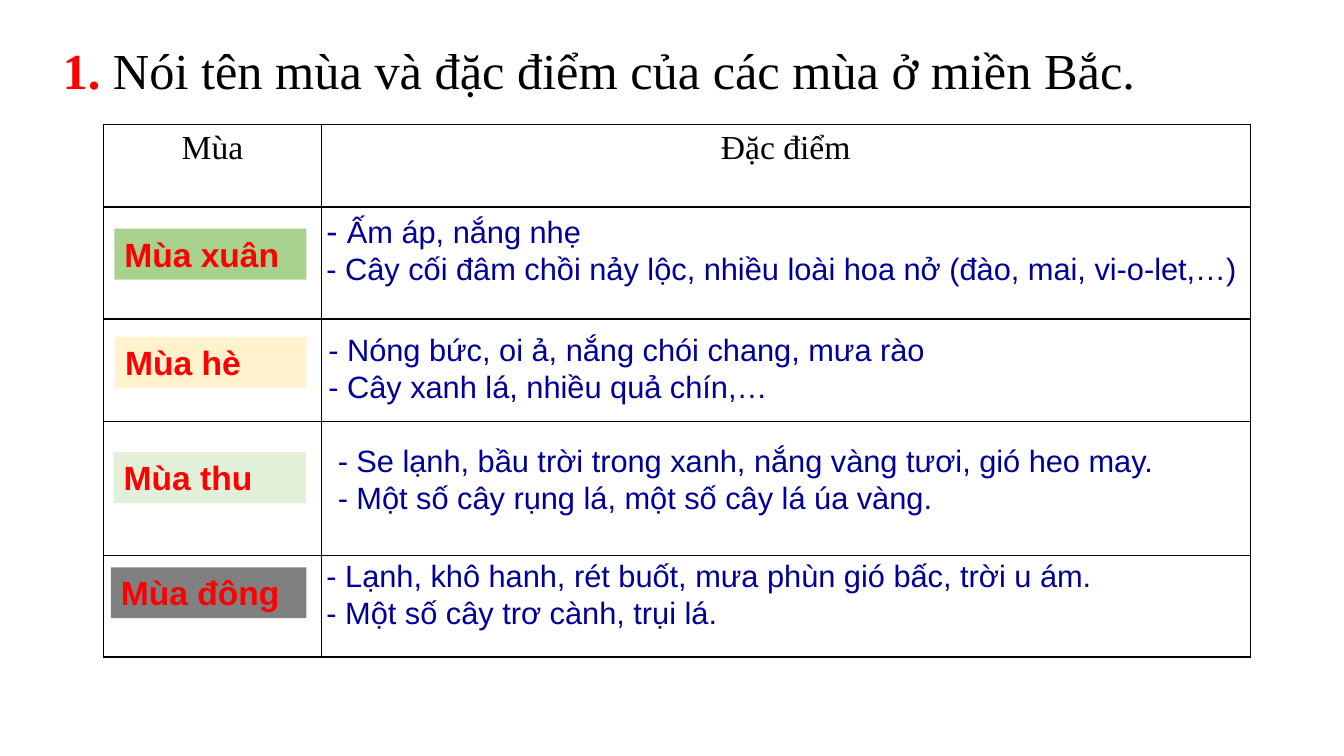
from lxml.etree import SubElement
from pptx import Presentation
from pptx.dml.color import RGBColor
from pptx.enum.shapes import MSO_SHAPE as SHAPE
from pptx.enum.text import MSO_ANCHOR as ANCHOR, MSO_AUTO_SIZE as AUTO, PP_ALIGN as ALIGN
from pptx.oxml.ns import qn
from pptx.util import Pt

RED = RGBColor(0xFF, 0x00, 0x00)
NAVY = RGBColor(0x00, 0x00, 0x99)
BLACK = RGBColor(0x00, 0x00, 0x00)
WHITE = RGBColor(0xFF, 0xFF, 0xFF)
SPRING = RGBColor(0xA9, 0xD1, 0x8E)
SUMMER = RGBColor(0xFF, 0xF2, 0xCC)
AUTUMN = RGBColor(0xE2, 0xF0, 0xD9)
WINTER = RGBColor(0x80, 0x80, 0x80)


def style(r, size, color, name="Arial", bold=False):
    r.font.name = name
    r.font.size = Pt(size)
    r.font.bold = bold
    r.font.color.rgb = color


def add_borders(cell):
    """Give the cell a thin black line on all four sides, then a white fill."""
    tcPr = cell._tc.get_or_add_tcPr()
    for side in ("a:lnL", "a:lnR", "a:lnT", "a:lnB"):
        ln = SubElement(tcPr, qn(side), w=str(Pt(1)))
        fill = SubElement(ln, qn("a:solidFill"))
        SubElement(fill, qn("a:srgbClr"), val=str(BLACK))
    cell.fill.solid()
    cell.fill.fore_color.rgb = WHITE


prs = Presentation()
prs.slide_width, prs.slide_height = Pt(960), Pt(540)
s = prs.slides.add_slide(prs.slide_layouts[5])

# Title
title = s.shapes.title
title.left, title.top, title.width, title.height = Pt(37.5), Pt(24), Pt(811.5), Pt(51)
tf = title.text_frame
tf.auto_size = AUTO.NONE
tf.vertical_anchor = ANCHOR.TOP
p = tf.paragraphs[0]
p.alignment = ALIGN.JUSTIFY
for text, color, bold in (
    ("1. ", RED, True),
    ("Nói tên mùa và đặc điểm của các mùa ở miền Bắc.", BLACK, False),
):
    r = p.add_run()
    r.text = text
    style(r, 36, color, "Times New Roman", bold)

# Table grid with its header row
col_widths = (155.5, 663.5)
row_heights = (59, 80, 73, 96, 72.5)
table = s.shapes.add_table(
    len(row_heights), len(col_widths), Pt(74), Pt(88.8), Pt(sum(col_widths)), Pt(sum(row_heights))
).table
table.first_row = table.horz_banding = False
for col, width in zip(table.columns, col_widths):
    col.width = Pt(width)
for row, height in zip(table.rows, row_heights):
    row.height = Pt(height)
for cell in table.iter_cells():
    add_borders(cell)
for cell, text in zip(table.rows[0].cells, ("Mùa", "Đặc điểm")):
    cell.text = text
    p = cell.text_frame.paragraphs[0]
    p.alignment = ALIGN.CENTER
    style(p.runs[0], 24, BLACK, "Times New Roman")

# Seasons: name, fill, label (left, top), features (left, top, width), lines of runs
LABEL_RIGHT = 218.8
seasons = (
    ("Mùa xuân", SPRING, (81.7, 163.4), (226.1, 146.3, 699),
     ((("- ", 24), ("Ấm áp, nắng nhẹ", 22)),
      (("- Cây cối đâm chồi nảy lộc, nhiều loài hoa nở (đào, mai, vi-o-let,…)", 22),))),
    ("Mùa hè", SUMMER, (82.2, 240.6), (227.5, 232.5, 642),
     ((("- Nóng bức, oi ả, nắng chói chang, mưa rào", 22),),
      (("- Cây xanh lá, nhiều quả chín,…", 22),))),
    ("Mùa thu", AUTUMN, (81.2, 323), (234.2, 311.8, 664),
     ((("- Se lạnh, bầu trời trong xanh, nắng vàng tươi, gió heo may.", 22),),
      (("- Một số cây rụng lá, một số cây lá úa vàng.", 22),))),
    ("Mùa đông", WINTER, (79.2, 405.2), (226.1, 394.3, 680),
     ((("- Lạnh, khô hanh, rét buốt, mưa phùn gió bấc, trời u ám.", 22),),
      (("- Một số cây trơ cành, trụi lá.", 22),))),
)
for name, color, (x, y), (left, top, width), lines in seasons:
    sp = s.shapes.add_shape(SHAPE.RECTANGLE, Pt(x), Pt(y), Pt(LABEL_RIGHT - x), Pt(36.3))
    sp.shadow.inherit = False
    sp.fill.solid()
    sp.fill.fore_color.rgb = color
    sp.line.fill.background()
    tf = sp.text_frame
    tf.text = name
    tf.vertical_anchor = ANCHOR.TOP
    p = tf.paragraphs[0]
    p.alignment = ALIGN.LEFT
    style(p.runs[0], 24, RED, bold=True)

    tf = s.shapes.add_textbox(Pt(left), Pt(top), Pt(width), Pt(60.5)).text_frame
    tf.word_wrap = True
    for i, line in enumerate(lines):
        p = tf.add_paragraph() if i else tf.paragraphs[0]
        for text, size in line:
            r = p.add_run()
            r.text = text
            style(r, size, NAVY)

prs.save("out.pptx")
